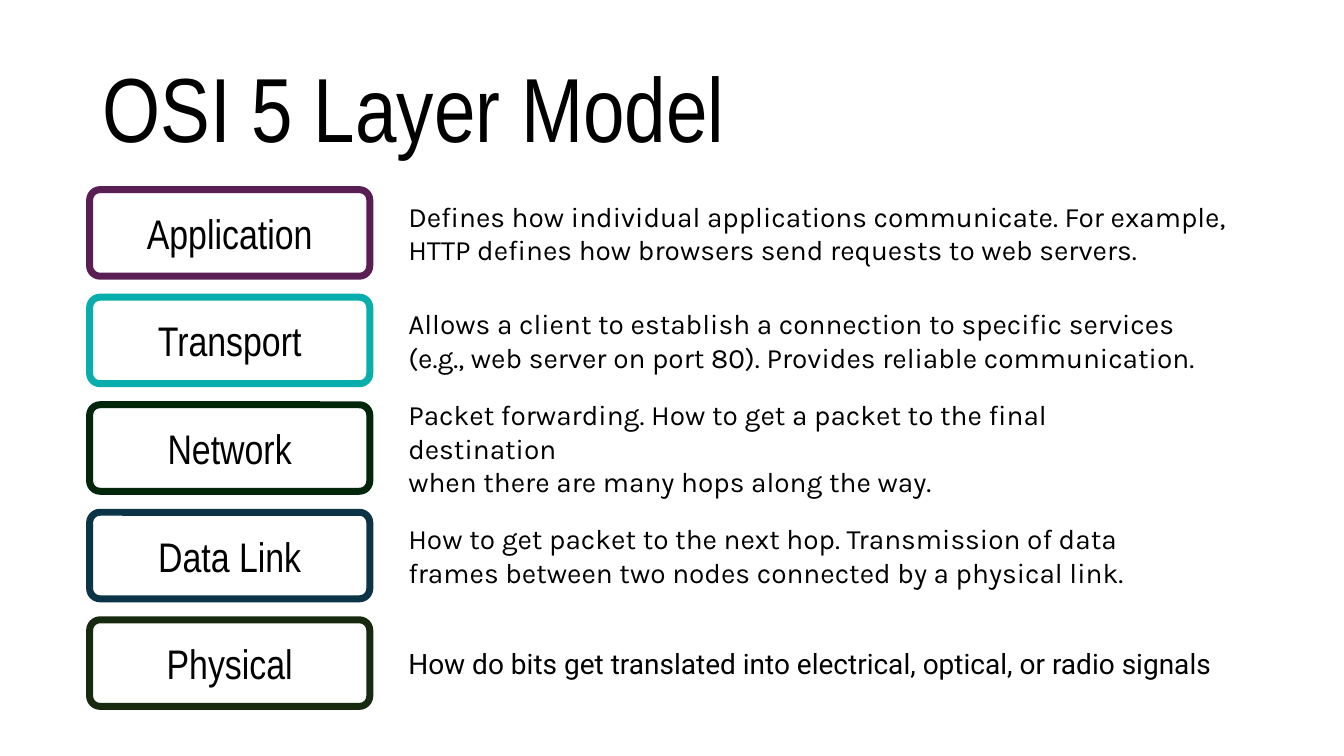
from pptx import Presentation
from pptx.dml.color import RGBColor
from pptx.enum import shapes, text
from pptx.util import Cm, Pt

TITLE = "OSI 5 Layer Model"
BLACK = RGBColor(0x00, 0x00, 0x00)
PURPLE = RGBColor(0x59, 0x1F, 0x54)
TEAL = RGBColor(0x08, 0xAE, 0xAB)
GREEN = RGBColor(0x01, 0x26, 0x0A)
NAVY = RGBColor(0x0B, 0x34, 0x46)
OLIVE = RGBColor(0x17, 0x2A, 0x0F)

# name, outline colour, description, description width in cm, description font
LAYERS = [
    ("Application", PURPLE,
     "Defines how individual applications communicate. For example, "
     "HTTP defines how browsers send requests to web servers.", 21.49, "Karla"),
    ("Transport", TEAL,
     "Allows a client to establish a connection to specific services\n"
     "(e.g., web server on port 80). Provides reliable communication.", 20.93, "Karla"),
    ("Network", GREEN,
     "Packet forwarding. How to get a packet to the final destination\n"
     "when there are many hops along the way.", 19.18, "Karla"),
    ("Data Link", NAVY,
     "How to get packet to the next hop. Transmission of data "
     "frames between two nodes connected by a physical link.", 19.84, "Karla"),
    ("Physical", OLIVE,
     "How do bits get translated into electrical, optical, or radio signals",
     20.73, "Roboto"),
]

# Layout in cm
LABEL_LEFT, LABEL_WIDTH = 2.26, 7.06
TEXT_LEFT = 10.21
FIRST_TOP, ROW_HEIGHT, ROW_PITCH = 4.78, 2.18, 2.71


def write(box, words, font, size, align, inset=None):
    frame = box.text_frame
    frame.word_wrap = True
    frame.auto_size = text.MSO_AUTO_SIZE.NONE
    frame.vertical_anchor = text.MSO_ANCHOR.MIDDLE
    if inset is not None:
        frame.margin_left = frame.margin_right = Cm(inset)
        frame.margin_top = frame.margin_bottom = Cm(inset)
    para = frame.paragraphs[0]
    para.text = words
    para.alignment = align
    para.font.name = font
    para.font.size = Pt(size)
    para.font.color.rgb = BLACK
    return para


def add_layer(page, top, name, colour, description, width, font):
    label = page.shapes.add_shape(
        shapes.MSO_SHAPE.ROUNDED_RECTANGLE,
        Cm(LABEL_LEFT), Cm(top), Cm(LABEL_WIDTH), Cm(ROW_HEIGHT))
    label.adjustments[0] = 0.12
    label.shadow.inherit = False
    label.fill.background()
    label.line.color.rgb = colour
    label.line.width = Pt(5)
    write(label, name, "Arial Narrow", 29.5, text.PP_ALIGN.CENTER, 0)

    box = page.shapes.add_textbox(
        Cm(TEXT_LEFT), Cm(top), Cm(width), Cm(ROW_HEIGHT))
    write(box, description, font, 20, text.PP_ALIGN.LEFT, 0.08)


def main():
    deck = Presentation()
    deck.slide_width, deck.slide_height = Cm(33.87), Cm(19.05)
    page = deck.slides.add_slide(deck.slide_layouts.get_by_name("Title Only"))

    title = page.shapes.title
    title.left, title.top = Cm(2.33), Cm(1.02)
    title.width, title.height = Cm(29.21), Cm(3.68)
    heading = write(title, TITLE, "Arial Narrow", 65, text.PP_ALIGN.LEFT)
    heading.line_spacing = 0.9

    for row, layer in enumerate(LAYERS):
        add_layer(page, FIRST_TOP + row * ROW_PITCH, *layer)

    deck.save("out.pptx")


if __name__ == "__main__":
    main()
